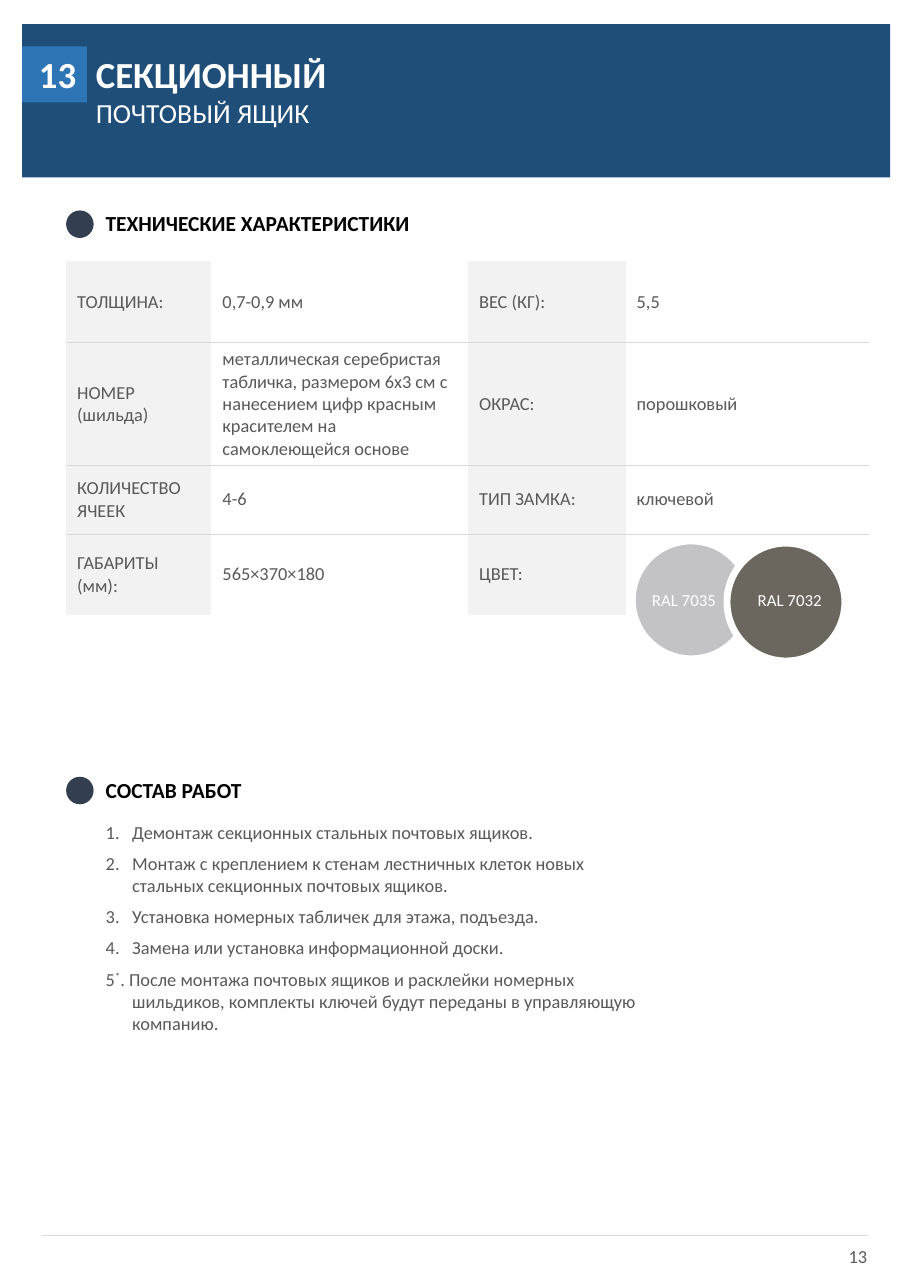
from lxml import etree
from pptx import Presentation
from pptx.dml.color import RGBColor
from pptx.enum.shapes import MSO_CONNECTOR, MSO_SHAPE
from pptx.enum.text import MSO_ANCHOR, MSO_AUTO_SIZE, PP_ALIGN
from pptx.oxml.ns import qn
from pptx.util import Inches, Pt

RECT, OVAL = MSO_SHAPE.RECTANGLE, MSO_SHAPE.OVAL
LEFT, RIGHT = PP_ALIGN.LEFT, PP_ALIGN.RIGHT
TOP, MIDDLE = MSO_ANCHOR.TOP, MSO_ANCHOR.MIDDLE

FONT = "Calibri"
NAVY, BLUE, DOT = "1F4E79", "2E75B6", "333F50"
WHITE, BLACK, GREY, PALE, RULE = "FFFFFF", "000000", "595959", "F2F2F2", "D9D9D9"
NO_GRID_STYLE = "{2D5ABB26-0587-4C30-8999-92F81FD0307C}"

NUMBER = "13"
TITLE = [("СЕКЦИОННЫЙ", 24, True), ("ПОЧТОВЫЙ ЯЩИК", 18, False)]
SECTIONS = [("ТЕХНИЧЕСКИЕ ХАРАКТЕРИСТИКИ", 1.86), ("СОСТАВ РАБОТ", 7.0)]
SPECS = [
    ("ТОЛЩИНА:", "0,7-0,9 мм", "ВЕС (КГ):", "5,5"),
    ("НОМЕР\n(шильда)",
     "металлическая серебристая табличка, размером 6х3 см с нанесением "
     "цифр красным красителем на самоклеющейся основе",
     "ОКРАС:", "порошковый"),
    ("КОЛИЧЕСТВО ЯЧЕЕК", "4-6", "ТИП ЗАМКА:", "ключевой"),
    ("ГАБАРИТЫ (мм):", "565×370×180", "ЦВЕТ:", ""),
]
COL_WIDTHS = [1.32, 2.33, 1.43, 2.21]
ROW_HEIGHTS = [0.74, 1.1, 0.62, 0.74]
# name, fill, circle left, circle top, label left
COLOURS = [("RAL 7035", "C3C3C5", 5.74, 4.91, 5.82),
           ("RAL 7032", "6B665E", 6.6, 4.93, 6.78)]
WORKS = [
    "Демонтаж секционных стальных почтовых ящиков.",
    "Монтаж с креплением к стенам лестничных клеток новых стальных "
    "секционных почтовых ящиков.",
    "Установка номерных табличек для этажа, подъезда.",
    "Замена или установка информационной доски.",
]
KEYS_NOTE = [("5", False), ("*", True),
             (". После монтажа почтовых ящиков и расклейки номерных шильдиков, "
              "комплекты ключей будут переданы в управляющую компанию.", False)]


def rgb(value):
    return RGBColor.from_string(value)


def add_run(p, text, size, color, bold=False):
    r = p.add_run()
    r.text = text
    r.font.name, r.font.size, r.font.bold = FONT, Pt(size), bold
    r.font.color.rgb = rgb(color)
    return r


def place(sp, x, y, w, h):
    sp.left, sp.top, sp.width, sp.height = map(Inches, (x, y, w, h))


def prepare(tf, wrap=True):
    tf.word_wrap = wrap
    tf.auto_size = MSO_AUTO_SIZE.NONE
    tf.vertical_anchor = TOP
    return tf


def add_block(s, kind, x, y, w, h, fill, line=None, weight=0):
    sp = s.shapes.add_shape(kind, *map(Inches, (x, y, w, h)))
    sp.shadow.inherit = False
    sp.fill.solid()
    sp.fill.fore_color.rgb = rgb(fill)
    if line:
        sp.line.color.rgb = rgb(line)
        sp.line.width = Pt(weight)
    else:
        sp.line.fill.background()
    return sp


def add_label(s, text, x, y, w, h, size, color, bold=False, align=LEFT, wrap=True):
    tf = prepare(s.shapes.add_textbox(*map(Inches, (x, y, w, h))).text_frame, wrap)
    p = tf.paragraphs[0]
    p.alignment = align
    add_run(p, text, size, color, bold)


def add_bottom_border(cell):
    ln = etree.Element(qn("a:lnB"), w=str(Pt(0.5)))
    fill = etree.SubElement(ln, qn("a:solidFill"))
    etree.SubElement(fill, qn("a:srgbClr"), val=RULE)
    cell._tc.get_or_add_tcPr().insert(0, ln)


def add_specs(s):
    frame = s.shapes.add_table(len(SPECS), len(COL_WIDTHS), Inches(0.6), Inches(2.37),
                               Inches(sum(COL_WIDTHS)), Inches(sum(ROW_HEIGHTS)))
    table = frame.table
    table.first_row = table.horz_banding = False
    table._tbl.tblPr.find(qn("a:tableStyleId")).text = NO_GRID_STYLE
    for column, width in zip(table.columns, COL_WIDTHS):
        column.width = Inches(width)
    for i, (row, values) in enumerate(zip(table.rows, SPECS)):
        row.height = Inches(ROW_HEIGHTS[i])
        for j, (cell, value) in enumerate(zip(row.cells, values)):
            cell.vertical_anchor = MIDDLE
            if j % 2 == 0:
                cell.fill.solid()
                cell.fill.fore_color.rgb = rgb(PALE)
            else:
                cell.fill.background()
            if i < len(SPECS) - 1:
                add_bottom_border(cell)
            if value:
                tf = cell.text_frame
                for k, text in enumerate(value.split("\n")):
                    p = tf.add_paragraph() if k else tf.paragraphs[0]
                    add_run(p, text, 12, GREY)


def add_works(body):
    place(body, 0.86, 7.4, 5.15, 2.05)
    tf = prepare(body.text_frame)
    items = [[(text, False)] for text in WORKS] + [KEYS_NOTE]
    for i, runs in enumerate(items):
        p = tf.add_paragraph() if i else tf.paragraphs[0]
        p.space_before = Pt(6)
        pPr = p._p.get_or_add_pPr()
        pPr.set("marL", str(Inches(0.24)))
        pPr.set("indent", str(-Inches(0.24)))
        if i < len(WORKS):
            etree.SubElement(pPr, qn("a:buFont"), typeface=FONT)
            etree.SubElement(pPr, qn("a:buAutoNum"), type="arabicPeriod")
        else:
            etree.SubElement(pPr, qn("a:buNone"))
        for text, raised in runs:
            r = add_run(p, text, 12, GREY)
            if raised:
                r.font._element.set("baseline", "30000")


def add_title(s):
    title = s.shapes.title
    place(title, 0.77, 0.42, 5.5, 0.81)
    tf = prepare(title.text_frame)
    for i, (text, size, bold) in enumerate(TITLE):
        p = tf.add_paragraph() if i else tf.paragraphs[0]
        p.alignment = LEFT
        if i == 0:
            p.line_spacing = Pt(29)
        add_run(p, text, size, WHITE, bold)
    s.shapes._spTree.append(title._element)  # bring in front of the banner


def main():
    prs = Presentation()
    prs.slide_width, prs.slide_height = Inches(8.27), Inches(11.69)
    s = prs.slides.add_slide(prs.slide_layouts[1])

    add_block(s, RECT, 0.2, 0.22, 7.88, 1.39, NAVY)
    badge = add_block(s, RECT, 0.2, 0.42, 0.59, 0.51, BLUE)
    tf = prepare(badge.text_frame)
    tf.margin_left = 0
    p = tf.paragraphs[0]
    p.alignment, p.line_spacing = RIGHT, Pt(29)
    add_run(p, NUMBER, 24, WHITE, True)
    add_title(s)

    for heading, y in SECTIONS:
        add_block(s, OVAL, 0.6, y + 0.05, 0.25, 0.25, DOT)
        add_label(s, heading, 0.86, y, 3.95, 0.34, 14, BLACK, bold=True)

    add_specs(s)
    for name, fill, x, y, label_x in COLOURS:
        add_block(s, OVAL, x, y, 1.07, 1.07, fill, WHITE, 4.5)
        add_label(s, name, label_x, 5.3, 0.79, 0.29, 11, WHITE, wrap=False)
    add_works(s.placeholders[1])

    footer = s.shapes.add_connector(MSO_CONNECTOR.STRAIGHT,
                                    *map(Inches, (0.38, 11.21, 7.88, 11.21)))
    footer.line.color.rgb = rgb(RULE)
    footer.line.width = Pt(0.5)
    etree.SubElement(footer._element.spPr, qn("a:effectLst"))
    add_label(s, NUMBER, 7.48, 11.25, 0.49, 0.31, 12, GREY, align=RIGHT)
    prs.save("out.pptx")


if __name__ == "__main__":
    main()
